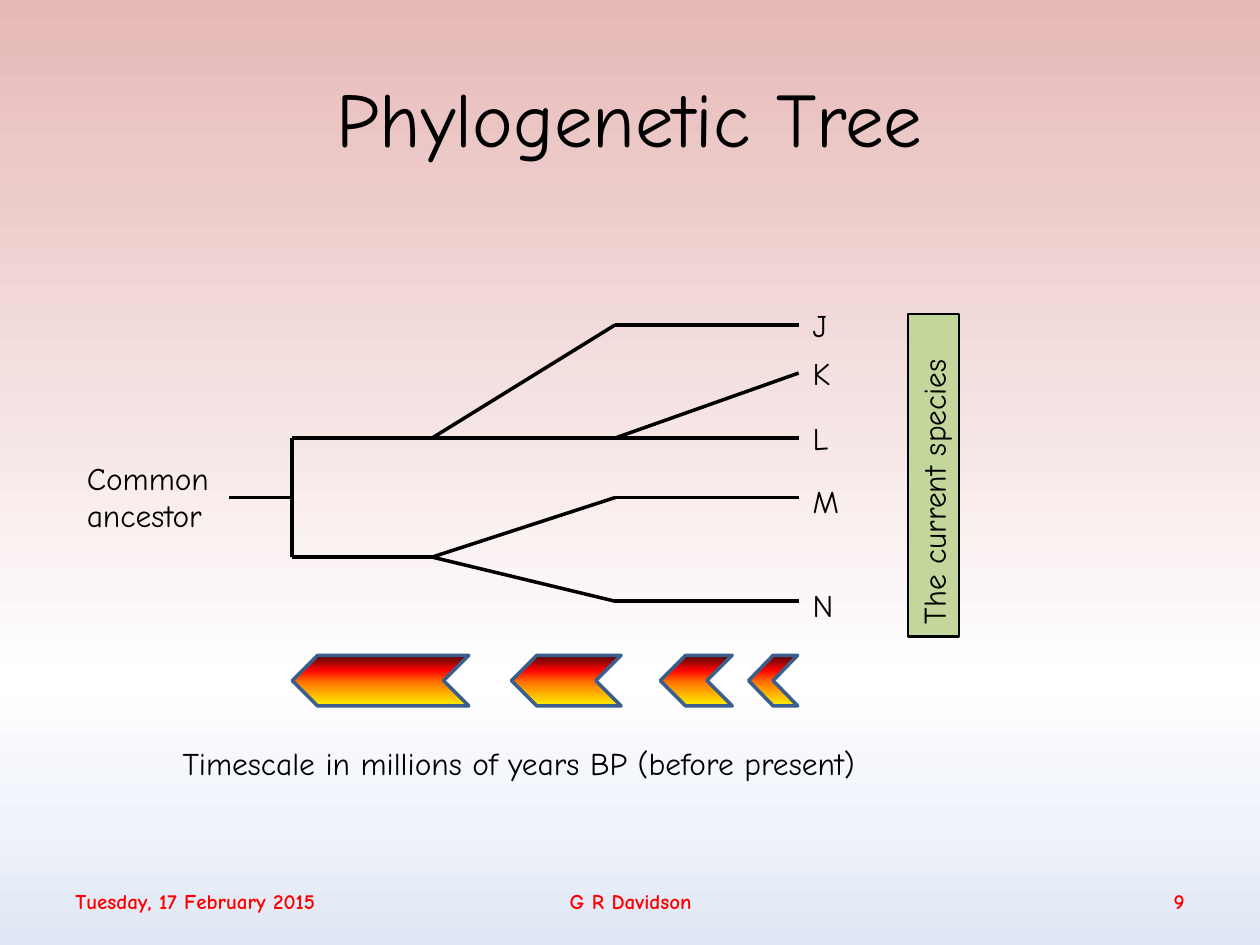
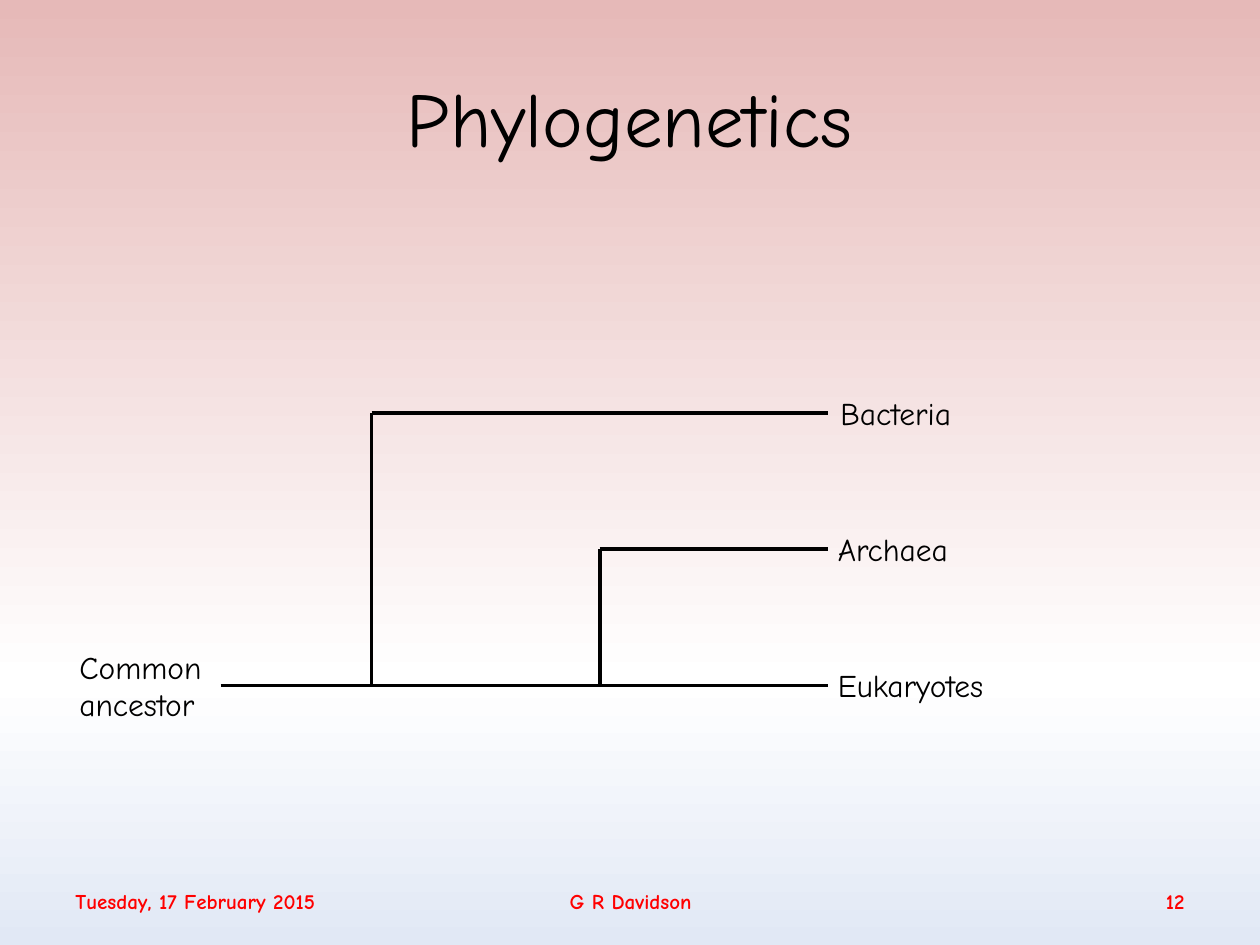
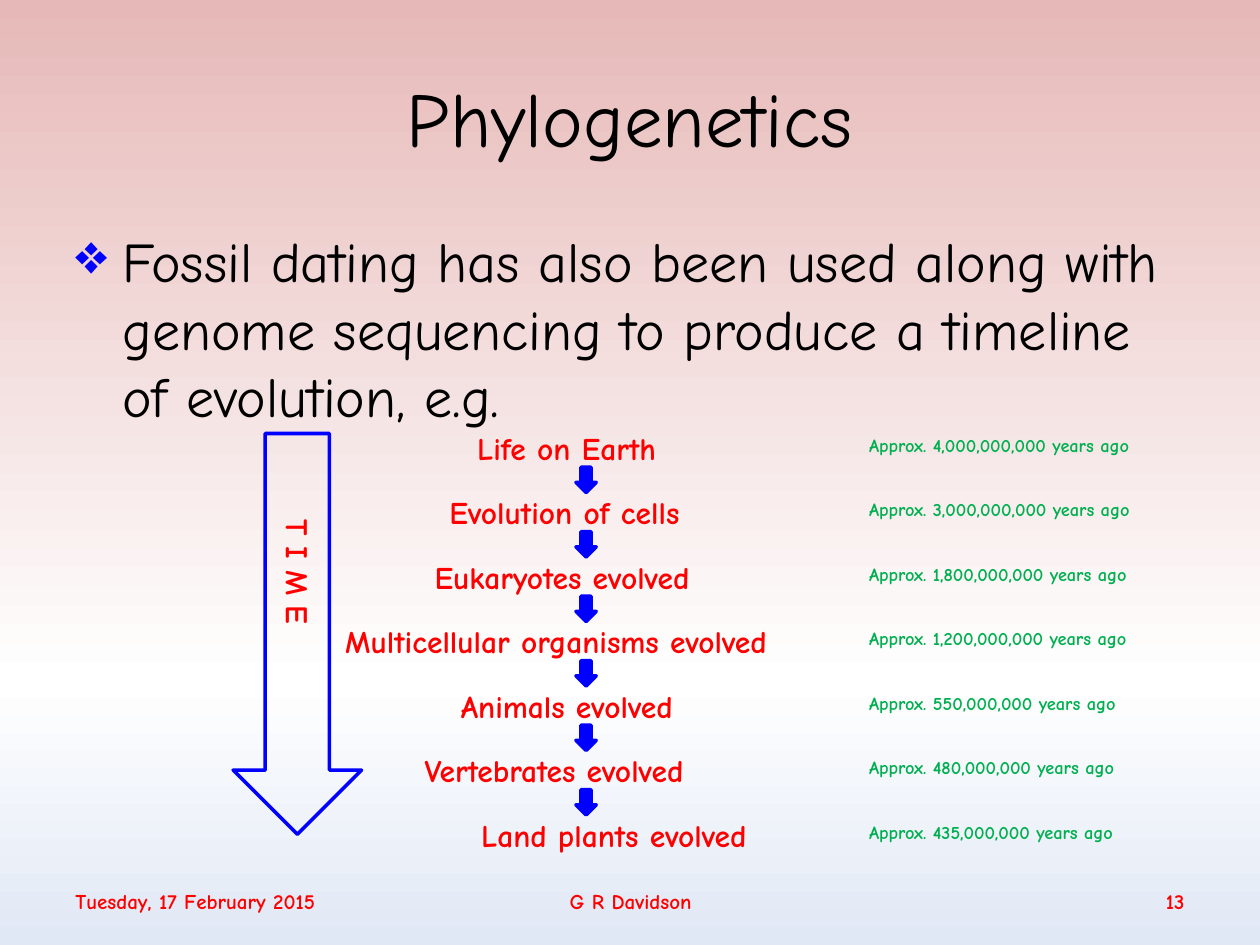
"""Build three slides on phylogenetic trees and the timeline of evolution."""
from lxml import etree
from pptx import Presentation
from pptx import util as u
from pptx.dml import color as dml
from pptx.enum import shapes, text
from pptx.oxml import ns

FONT = "Comic Neue"
BLACK, RED, GREEN, BLUE = "000000", "FF0000", "00B050", "0000FF"
BACKDROP = [(0, "E6B9B8"), (72, "FFFFFF"), (100, "E1E8F5")]
FIRE = [(0, "FFF200"), (45, "FF7A00"), (70, "FF0300"), (100, "4D0808")]
LEFT, CENTRE, RIGHT = text.PP_ALIGN.LEFT, text.PP_ALIGN.CENTER, text.PP_ALIGN.RIGHT
LABEL_HEIGHT = 1.02
STEP = 1.3
rgb = dml.RGBColor.from_string


def write(box, words, size=18, colour=BLACK, bold=False, align=LEFT, wrap=False,
          anchor=text.MSO_ANCHOR.TOP):
    """Put one paragraph per line of words into a box."""
    frame = box.text_frame
    frame.word_wrap = wrap
    frame.vertical_anchor = anchor
    frame.text = words
    for para in frame.paragraphs:
        para.alignment = align
        para.font.name = FONT
        para.font.size = u.Pt(size)
        para.font.bold = bold
        para.font.color.rgb = rgb(colour)
    return frame.paragraphs[0]


def blend(owner, fill, stops):
    """Give a fill a top-to-bottom gradient with any number of stops."""
    fill.gradient()
    fill.gradient_angle = 270
    stop_list = next(owner.element.iter(ns.qn("a:gsLst")))
    stop_list.clear()
    for percent, colour in stops:
        stop = etree.SubElement(stop_list, ns.qn("a:gs"), pos=str(percent * 1000))
        etree.SubElement(stop, ns.qn("a:srgbClr"), val=colour)


deck = Presentation()
deck.slide_width, deck.slide_height = u.Cm(25.4), u.Cm(19.05)

pages = []
for title, number in [("Phylogenetic Tree", 9), ("Phylogenetics", 12), ("Phylogenetics", 13)]:
    page = deck.slides.add_slide(deck.slide_layouts[6])
    pages.append(page)
    blend(page, page.background.fill, BACKDROP)
    for words, left, top, width, height, size, colour, bold, align in [
        (title, 1.27, 0.76, 22.86, 3.18, 44, BLACK, False, CENTRE),
        ("Tuesday, 17 February 2015", 1.27, 17.65, 8.43, 1.02, 12, RED, True, LEFT),
        ("G R Davidson", 8.69, 17.65, 8.05, 1.02, 12, RED, True, CENTRE),
        (str(number), 18.21, 17.65, 5.92, 1.02, 12, RED, True, RIGHT),
    ]:
        box = page.shapes.add_textbox(*map(u.Cm, (left, top, width, height)))
        write(box, words, size, colour, bold, align, True, text.MSO_ANCHOR.MIDDLE)
species_page, domains_page, timeline_page = pages

root, split, fork, bend, tip = 4.62, 5.89, 8.71, 12.4, 16.1
upper, middle, lower = 8.83, 10.03, 11.23
j_row, k_row, n_row = 6.55, 7.52, 12.12
species_lines = [
    (root, middle, split, middle), (split, lower, split, upper),
    (split, lower, fork, lower), (split, upper, fork, upper),
    (fork, upper, bend, j_row), (fork, upper, bend, upper),
    (fork, lower, bend, middle), (fork, lower, bend, n_row),
    (bend, upper, tip, k_row),
] + [(bend, row, tip, row) for row in (j_row, upper, middle, n_row)]

start, first_split, second_split, end = 4.45, 7.49, 12.09, 16.69
bacteria_row, archaea_row, eukaryote_row = 8.33, 11.07, 13.82
domain_lines = [
    (start, eukaryote_row, end, eukaryote_row),
    (first_split, eukaryote_row, first_split, bacteria_row),
    (first_split, bacteria_row, end, bacteria_row),
    (second_split, eukaryote_row, second_split, archaea_row),
    (second_split, archaea_row, end, archaea_row),
]

for page, lines in [(species_page, species_lines), (domains_page, domain_lines)]:
    for ends in lines:
        branch = page.shapes.add_connector(shapes.MSO_CONNECTOR.STRAIGHT, *map(u.Cm, ends))
        branch.line.color.rgb = rgb(BLACK)
        branch.line.width = u.Pt(2)
        etree.SubElement(branch.element.spPr, ns.qn("a:effectLst"))

for page, words, left, top, width, height in [
    (species_page, "Common\nancestor", 1.5, 9.12, 3.12, 1.8),
    (species_page, "J", 16.13, 6.05, 0.94, LABEL_HEIGHT),
    (species_page, "K", 16.13, 7.01, 0.91, LABEL_HEIGHT),
    (species_page, "L", 16.13, 8.33, 0.86, LABEL_HEIGHT),
    (species_page, "M", 16.13, 9.6, 1.07, LABEL_HEIGHT),
    (species_page, "N", 16.13, 11.68, 1.02, LABEL_HEIGHT),
    (species_page, "Timescale in millions of years BP (before present)",
     3.43, 14.88, 15.37, LABEL_HEIGHT),
    (domains_page, "Common\nancestor", 1.35, 12.93, 3.12, 1.8),
    (domains_page, "Bacteria", 16.69, 7.82, 3.05, LABEL_HEIGHT),
    (domains_page, "Archaea", 16.64, 10.57, 3, LABEL_HEIGHT),
    (domains_page, "Eukaryotes", 16.64, 13.31, 3.86, LABEL_HEIGHT),
]:
    write(page.shapes.add_textbox(*map(u.Cm, (left, top, width, height))), words)

species_bar = species_page.shapes.add_shape(
    shapes.MSO_SHAPE.RECTANGLE, *map(u.Cm, (15.57, 9.07, 6.5, LABEL_HEIGHT)))
species_bar.rotation = 270
species_bar.shadow.inherit = False
species_bar.fill.solid()
species_bar.fill.fore_color.rgb = rgb("C3D69B")
species_bar.line.color.rgb = rgb(BLACK)
species_bar.line.width = u.Pt(1.25)
write(species_bar, "The current species")

for left, width in [(15.09, 0.99), (13.31, 1.45), (10.31, 2.21), (5.89, 3.56)]:
    chevron = species_page.shapes.add_shape(
        shapes.MSO_SHAPE.CHEVRON, *map(u.Cm, (left, 13.21, width, 1.02)))
    chevron.rotation = 180
    chevron.shadow.inherit = False
    blend(chevron, chevron.fill, FIRE)
    chevron.line.color.rgb = rgb("3A5F8C")
    chevron.line.width = u.Pt(2)

body = timeline_page.shapes.add_textbox(*map(u.Cm, (1.27, 4.45, 22.86, 12.57)))
para = write(body, "Fossil dating has also been used along with genome sequencing "
             "to produce a timeline of evolution, e.g.", 32, wrap=True)
para.space_before = u.Pt(6.4)
settings = para._p.get_or_add_pPr()
settings.set("marL", str(u.Cm(0.95)))
settings.set("indent", str(u.Cm(-0.95)))
font_settings = settings.find(ns.qn("a:defRPr"))
bullet_colour = etree.Element(ns.qn("a:buClr"))
etree.SubElement(bullet_colour, ns.qn("a:srgbClr"), val=BLUE)
font_settings.addprevious(bullet_colour)
font_settings.addprevious(etree.Element(ns.qn("a:buChar"), char="❖"))

small_arrows = [(11.61, 9.42 + STEP * row, 0.41, 0.51) for row in range(6)]
time_arrow = (4.7, 8.74, 2.59, 8.08)
for place in small_arrows + [time_arrow]:
    arrow = timeline_page.shapes.add_shape(shapes.MSO_SHAPE.DOWN_ARROW, *map(u.Cm, place))
    arrow.shadow.inherit = False
    arrow.line.color.rgb = rgb(BLUE)
    arrow.line.width = u.Pt(2)
    if place == time_arrow:
        arrow.fill.background()
    else:
        arrow.fill.solid()
        arrow.fill.fore_color.rgb = rgb(BLUE)

time_label = timeline_page.shapes.add_textbox(*map(u.Cm, (4.45, 11.28, 3.12, LABEL_HEIGHT)))
time_label.rotation = 90
para = write(time_label, "TIME", colour=RED, bold=True)
para.runs[0]._r.get_or_add_rPr().set("spc", "600")

for row, (event, left, width, age) in enumerate([
    ("Life on Earth", 9.37, 4.7, 4_000_000_000),
    ("Evolution of cells", 8.81, 5.79, 3_000_000_000),
    ("Eukaryotes evolved", 8.51, 6.45, 1_800_000_000),
    ("Multicellular organisms evolved", 6.71, 10.03, 1_200_000_000),
    ("Animals evolved", 9.04, 5.33, 550_000_000),
    ("Vertebrates evolved", 8.31, 6.81, 480_000_000),
    ("Land plants evolved", 9.45, 6.55, 435_000_000),
]):
    box = timeline_page.shapes.add_textbox(
        *map(u.Cm, (left, 8.52 + STEP * row, width, LABEL_HEIGHT)))
    write(box, event, colour=RED, bold=True)
    date_width = 6.76 if age >= 1_000_000_000 else 6.38
    box = timeline_page.shapes.add_textbox(
        *map(u.Cm, (17.27, 8.62 + STEP * row, date_width, 0.71)))
    write(box, f"Approx. {age:,} years ago", 10.5, GREEN, True)

deck.save("out.pptx")
